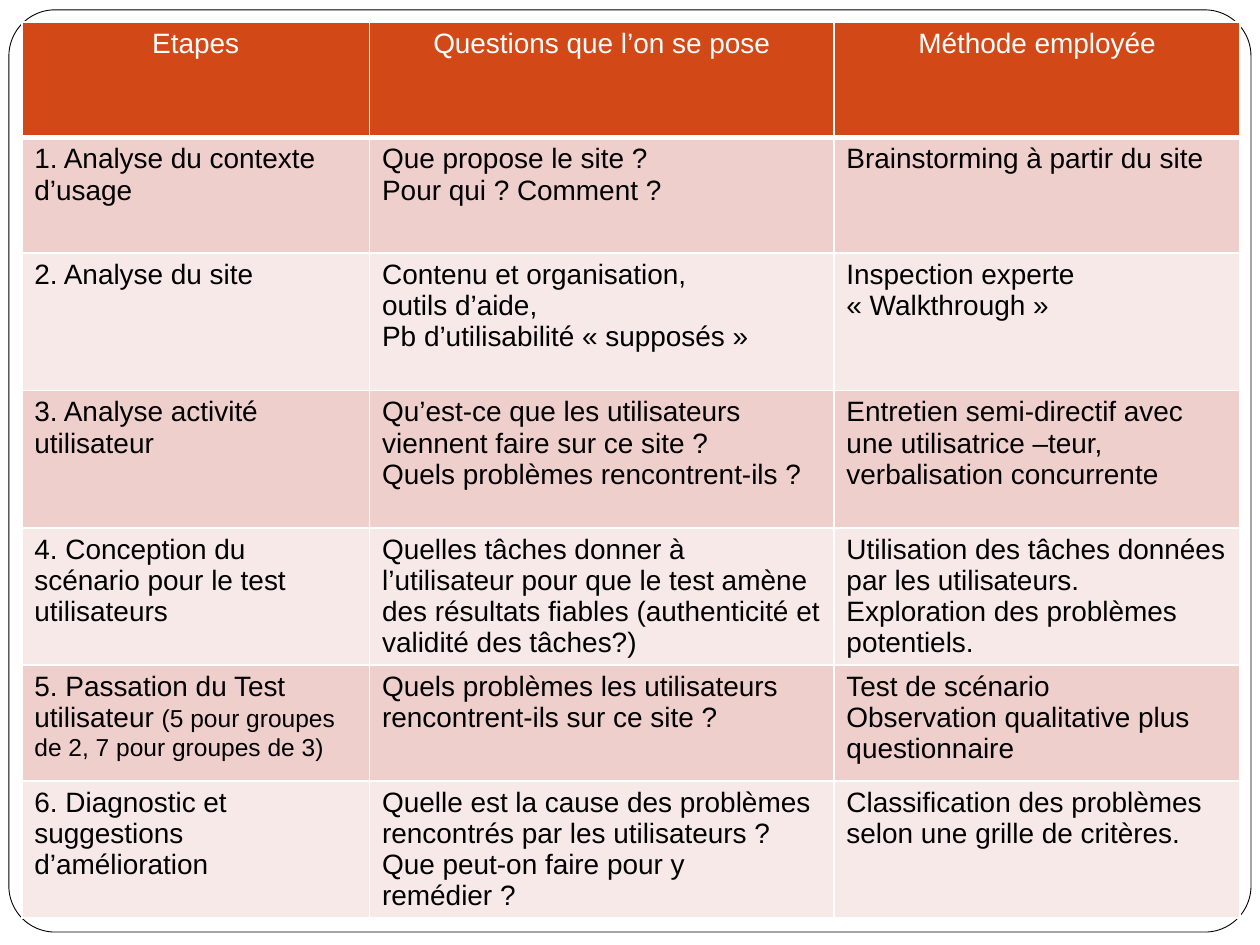
from dataclasses import dataclass

from lxml import etree
from pptx import Presentation
from pptx.dml.color import RGBColor
from pptx.enum import shapes, text
from pptx.oxml import ns
from pptx.util import Cm, Pt


@dataclass(frozen=True)
class Theme:
    font: str = "Arial"
    body_size: int = 16
    note_size: int = 14
    header: str = "D34817"
    bands: tuple = ("EFCFCC", "F7E9E8")
    white: str = "FFFFFF"
    black: str = "000000"


THEME = Theme()

# A line break starts a paragraph; "|" starts a note in smaller type.
ROWS = [
    ("Etapes", "Questions que l’on se pose", "Méthode employée"),
    ("1. Analyse du contexte d’usage",
     "Que propose le site ?\nPour qui ? Comment ?",
     "Brainstorming à partir du site"),
    ("2. Analyse du site",
     "Contenu et organisation,\noutils d’aide,\nPb d’utilisabilité « supposés »",
     "Inspection experte\n« Walkthrough »"),
    ("3. Analyse activité utilisateur",
     "Qu’est-ce que les utilisateurs viennent faire sur ce site ?\n"
     "Quels problèmes rencontrent-ils ?",
     "Entretien semi-directif avec une utilisatrice –teur, "
     "verbalisation concurrente"),
    ("4. Conception du scénario pour le test utilisateurs",
     "Quelles tâches donner à l’utilisateur pour que le test amène des "
     "résultats fiables (authenticité et validité des tâches?)",
     "Utilisation des tâches données par les utilisateurs.\n"
     "Exploration des problèmes potentiels."),
    ("5. Passation du Test utilisateur |(5 pour groupes de 2, 7 pour groupes de 3)",
     "Quels problèmes les utilisateurs rencontrent-ils sur ce site ?",
     "Test de scénario\nObservation qualitative plus questionnaire"),
    ("6. Diagnostic et suggestions d’amélioration",
     "Quelle est la cause des problèmes rencontrés par les utilisateurs ?\n"
     "Que peut-on faire pour y remédier ?",
     "Classification des problèmes selon une grille de critères."),
]
COLUMN_WIDTHS = (7.01, 9.36, 8.19)
SHORT, TALL = 2.33, 2.77
ROW_HEIGHTS = (SHORT, SHORT, TALL, TALL, TALL, SHORT, TALL)


def add_borders(cell, widths):
    """Draw white cell borders; widths maps a side (L, R, T, B) to points."""
    properties = cell._tc.get_or_add_tcPr()
    for side, width in widths.items():
        border = etree.SubElement(properties, ns.qn(f"a:ln{side}"), w=str(Pt(width)))
        fill = etree.SubElement(border, ns.qn("a:solidFill"))
        etree.SubElement(fill, ns.qn("a:srgbClr"), val=THEME.white)


def write_paragraph(paragraph, content, color, alignment):
    paragraph.alignment = alignment
    for part, size in zip(content.split("|"), (THEME.body_size, THEME.note_size)):
        run = paragraph.add_run()
        run.text = part
        for name, value in {"name": THEME.font, "size": Pt(size), "bold": False}.items():
            setattr(run.font, name, value)
        run.font.color.rgb = RGBColor.from_string(color)


deck = Presentation()
deck.slide_width, deck.slide_height = Cm(25.4), Cm(19.05)
slide = deck.slides.add_slide(deck.slide_layouts[6])

frame = slide.shapes.add_shape(
    shapes.MSO_SHAPE.ROUNDED_RECTANGLE, Cm(0.18), Cm(0.2), Cm(25.04), Cm(18.59))
frame.adjustments[0] = 0.05
frame.shadow.inherit = False
frame.fill.solid()
frame.fill.fore_color.rgb = RGBColor.from_string(THEME.white)
frame.line.color.rgb = RGBColor.from_string(THEME.black)
frame.line.width = Pt(0.5)

steps = slide.shapes.add_table(
    len(ROWS), len(COLUMN_WIDTHS), Cm(0.44), Cm(0.44),
    Cm(sum(COLUMN_WIDTHS)), Cm(sum(ROW_HEIGHTS))).table
for column, width in zip(steps.columns, COLUMN_WIDTHS):
    column.width = Cm(width)

for r, (contents, height) in enumerate(zip(ROWS, ROW_HEIGHTS)):
    steps.rows[r].height = Cm(height)
    is_header = r == 0
    background = THEME.header if is_header else THEME.bands[(r - 1) % 2]
    color = THEME.white if is_header else THEME.black
    alignment = text.PP_ALIGN.CENTER if is_header else text.PP_ALIGN.LEFT
    for c, content in enumerate(contents):
        cell = steps.cell(r, c)
        add_borders(cell, {"L": 1, "R": 1, "T": 1, "B": 3 if is_header else 1})
        cell.fill.solid()
        cell.fill.fore_color.rgb = RGBColor.from_string(background)
        for i, line in enumerate(content.split("\n")):
            body = cell.text_frame
            paragraph = body.add_paragraph() if i else body.paragraphs[0]
            write_paragraph(paragraph, line, color, alignment)

deck.save("out.pptx")
